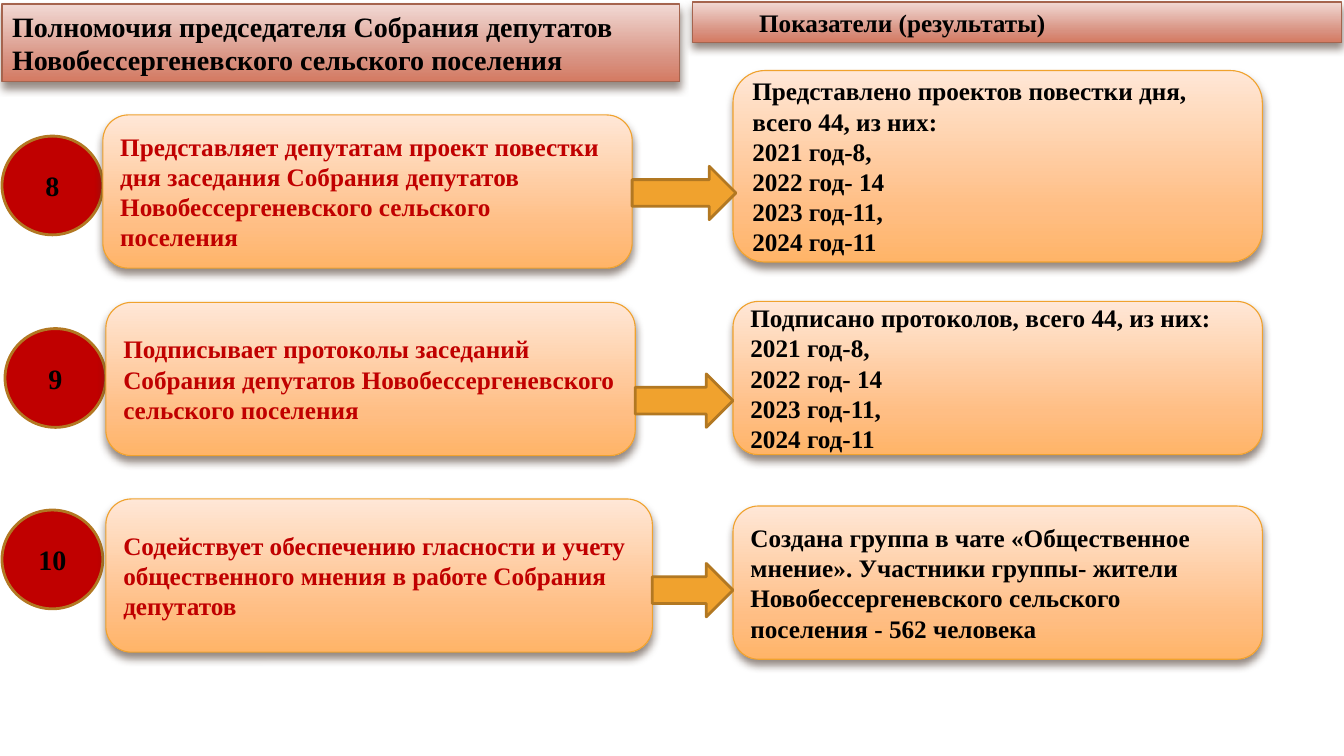
"""Builds the slide on the powers of the assembly chair and their results."""
from copy import deepcopy

from lxml import etree
from pptx import Presentation
from pptx import util as u
from pptx.dml.color import RGBColor
from pptx.enum import shapes, text
from pptx.oxml.ns import qn

PX = 9144
FONT = "Times New Roman"
RED = "C00000"
BLACK = "000000"
BROWN = "B27822"
AMBER = "F0A22E"
ROSE_STOPS = ("F1D9D4", "D89180", "D47A62")
PEACH_STOPS = ("FFE7D7", "FFBE84", "FFB468")
STOP_POSITIONS = (0, 0.72, 1)
BOX_LEFT, BOX_WIDTH, BOX_HEIGHT = 727, 525, 152
YEARS = ["2021 год-8,", "2022 год- 14", "2023 год-11,", "2024 год-11"]

ROWS = [
    ("8", (2, 135), (102, 114, BOX_WIDTH),
     "Представляет депутатам проект повестки дня заседания Собрания депутатов "
     "Новобессергеневского сельского поселения",
     (627, 165, 103), (70, 190),
     ["Представлено проектов повестки дня, всего 44, из них:"] + YEARS),
    ("9", (5, 326), (105, 300, BOX_WIDTH),
     "Подписывает протоколы заседаний Собрания депутатов Новобессергеневского "
     "сельского поселения",
     (630, 371, 97), (299, BOX_HEIGHT),
     ["Подписано протоколов, всего 44, из них:"] + YEARS),
    ("10", (2, 506), (105, 495, 542),
     "Содействует обеспечению гласности и учету общественного мнения в работе "
     "Собрания депутатов",
     (647, 559, 80), (502, BOX_HEIGHT),
     ["Создана группа в чате «Общественное мнение». Участники группы- жители "
      "Новобессергеневского сельского поселения - 562 человека"]),
]


def color(value):
    """Turn a hex string into a colour."""
    return RGBColor.from_string(value)


def place(shape, left, top, width, height):
    """Move and size a shape, in px."""
    shape.left, shape.top = left * PX, top * PX
    shape.width, shape.height = width * PX, height * PX


def add_shape(slide, kind, *place_px):
    """Add a preset shape without a shadow."""
    shape = slide.shapes.add_shape(kind, *(value * PX for value in place_px))
    shape.shadow.inherit = False
    return shape


def set_line(shape, value, width):
    """Outline a shape."""
    shape.line.color.rgb = color(value)
    shape.line.width = u.Pt(width)


def set_solid(shape, value):
    """Fill a shape with one colour and give it the brown outline."""
    shape.fill.solid()
    shape.fill.fore_color.rgb = color(value)
    set_line(shape, BROWN, 2)


def set_raised(shape, stops, line):
    """Give a shape a vertical gradient, a thin outline and a soft shadow."""
    shape.fill.gradient()
    shape.fill.gradient_angle = 270
    stop_list = shape._element.spPr.find(qn("a:gradFill")).find(qn("a:gsLst"))
    stop_list.append(deepcopy(stop_list[-1]))
    for stop, value, position in zip(shape.fill.gradient_stops, stops, STOP_POSITIONS):
        stop.color.rgb = color(value)
        stop.position = position
    set_line(shape, line, 0.79)
    shape.shadow.inherit = False
    effects = shape._element.spPr.find(qn("a:effectLst"))
    shadow = etree.SubElement(effects, qn("a:outerShdw"), blurRad=str(u.Pt(6)),
                              dist=str(u.Pt(4)), dir="5400000", rotWithShape="0")
    tone = etree.SubElement(shadow, qn("a:srgbClr"), val="4E3B30")
    etree.SubElement(tone, qn("a:alpha"), val="60000")


def write(shape, lines, size, value=BLACK, align=text.PP_ALIGN.LEFT,
          anchor=text.MSO_ANCHOR.MIDDLE):
    """Write bold paragraphs into a shape."""
    frame = shape.text_frame
    frame.word_wrap = True
    frame.auto_size = text.MSO_AUTO_SIZE.NONE
    frame.vertical_anchor = anchor
    frame.text = "\n".join(lines)
    for paragraph in frame.paragraphs:
        paragraph.alignment = align
        paragraph.font.name = FONT
        paragraph.font.size = u.Pt(size)
        paragraph.font.bold = True
        paragraph.font.color.rgb = color(value)


def format_header(shape, line, size):
    """Format a column header."""
    set_raised(shape, ROSE_STOPS, "A5644E")
    write(shape, [line], size, anchor=text.MSO_ANCHOR.TOP)


def add_box(slide, lines, value, *place_px):
    """Add a rounded text box."""
    box = add_shape(slide, shapes.MSO_SHAPE.ROUNDED_RECTANGLE, *place_px)
    set_raised(box, PEACH_STOPS, AMBER)
    write(box, lines, 18, value)


def add_number(slide, number, left, top):
    """Add a numbered circle."""
    circle = add_shape(slide, shapes.MSO_SHAPE.OVAL, left, top, 100, 98)
    set_solid(circle, RED)
    write(circle, [number], 20, align=text.PP_ALIGN.CENTER)


def add_arrow(slide, left, top, width):
    """Add an arrow from a power to its result."""
    arrow = add_shape(slide, shapes.MSO_SHAPE.RIGHT_ARROW, left, top, width, 53)
    set_solid(arrow, AMBER)


def main():
    """Build and save the slide."""
    presentation = Presentation()
    presentation.slide_width, presentation.slide_height = 1333 * PX, 750 * PX
    slide = presentation.slides.add_slide(presentation.slide_layouts[5])

    title = slide.shapes.title
    place(title, 2, 4, 672, 77)
    format_header(title, "Полномочия председателя Собрания депутатов "
                  "Новобессергеневского сельского поселения", 20)
    results = add_shape(slide, shapes.MSO_SHAPE.RECTANGLE, 687, 2, 644, 40)
    format_header(results, "Показатели (результаты)", 18)
    results.text_frame.margin_left = 66 * PX

    for number, circle, (left, top, width), power, arrow, (result_top, height), lines in ROWS:
        add_number(slide, number, *circle)
        add_box(slide, [power], RED, left, top, width, BOX_HEIGHT)
        add_box(slide, lines, BLACK, BOX_LEFT, result_top, BOX_WIDTH, height)
        add_arrow(slide, *arrow)

    presentation.save("out.pptx")


if __name__ == "__main__":
    main()
